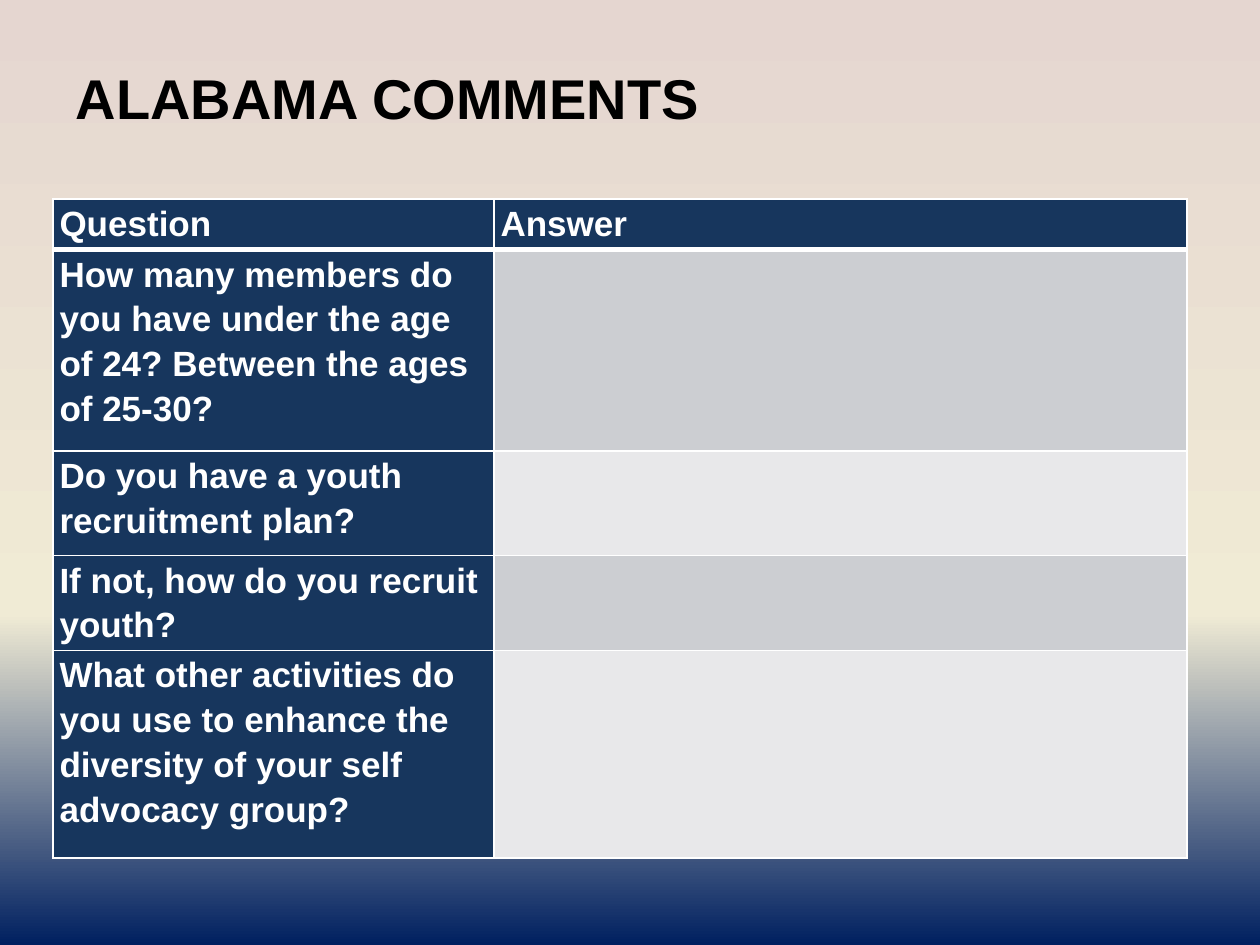
from lxml.etree import SubElement
from pptx import Presentation
from pptx.dml.color import RGBColor
from pptx.enum.text import MSO_ANCHOR, PP_ALIGN
from pptx.oxml.ns import qn
from pptx.util import Cm, Pt

TITLE = "ALABAMA COMMENTS"
ROWS = [
    ("Question", "Answer"),
    ("How many members do you have under the age of 24? Between the ages of 25-30?", ""),
    ("Do you have a youth recruitment plan?", ""),
    ("If not, how do you recruit youth?", ""),
    ("What other activities do you use to enhance the diversity of your self advocacy group?", ""),
]
COLUMN_WIDTHS = [8.89, 13.97]
ROW_HEIGHTS = [1.02, 4.06, 2.11, 1.91, 4.19]
BACKGROUND_STOPS = [(0, "E5D6D0"), (65, "F0EBD5"), (100, "002060")]
NAVY, WHITE, BLACK = "17365D", "FFFFFF", "000000"
ANSWER_BANDS = ["CCCED2", "E8E8EA"]


def color(hex_code):
    return RGBColor.from_string(hex_code)


def add_text(para, text, size, hex_code):
    span = para.add_run()
    span.text = text
    span.font.name = "Arial"
    span.font.size = Pt(size)
    span.font.bold = True
    span.font.color.rgb = color(hex_code)


def paint_background(page):
    fill = page.background.fill
    fill.gradient()
    fill.gradient_angle = 270
    stops = page.element.find(".//" + qn("a:gsLst"))
    for stop in list(stops):
        stops.remove(stop)
    for percent, hex_code in BACKGROUND_STOPS:
        stop = SubElement(stops, qn("a:gs"), pos=str(percent * 1000))
        SubElement(stop, qn("a:srgbClr"), val=hex_code)


def add_borders(cell, is_header, below_header):
    widths = {"L": 1, "R": 1, "T": 3 if below_header else 1, "B": 3 if is_header else 1}
    properties = cell._tc.get_or_add_tcPr()
    for side, width in widths.items():
        line = SubElement(properties, qn(f"a:ln{side}"), w=str(Pt(width)))
        SubElement(SubElement(line, qn("a:solidFill")), qn("a:srgbClr"), val=WHITE)


def add_title(page):
    title = page.shapes.title
    title.left, title.top, title.width, title.height = Cm(1.27), Cm(0.76), Cm(22.86), Cm(2.41)
    title.text_frame.vertical_anchor = MSO_ANCHOR.MIDDLE
    para = title.text_frame.paragraphs[0]
    para.alignment = PP_ALIGN.LEFT
    add_text(para, TITLE, 32, BLACK)


def add_question_table(page):
    table = page.shapes.add_table(
        len(ROWS), len(COLUMN_WIDTHS), Cm(1.07), Cm(4.01),
        Cm(sum(COLUMN_WIDTHS)), Cm(sum(ROW_HEIGHTS))).table
    for column, width in zip(table.columns, COLUMN_WIDTHS):
        column.width = Cm(width)
    for row, height in zip(table.rows, ROW_HEIGHTS):
        row.height = Cm(height)

    for row_number, texts in enumerate(ROWS):
        for column_number, text in enumerate(texts):
            cell = table.cell(row_number, column_number)
            add_borders(cell, row_number == 0, row_number == 1)
            cell.fill.solid()
            band = ANSWER_BANDS[(row_number - 1) % 2]
            cell.fill.fore_color.rgb = color(NAVY if text else band)
            if text:
                cell.margin_left = cell.margin_right = Cm(0.13)
                cell.margin_top = cell.margin_bottom = Cm(0)
                para = cell.text_frame.paragraphs[0]
                para.line_spacing = 1.15
                add_text(para, text, 20, WHITE)


def main():
    deck = Presentation()
    deck.slide_width, deck.slide_height = Cm(25.4), Cm(19.05)
    page = deck.slides.add_slide(deck.slide_layouts[5])
    paint_background(page)
    add_title(page)
    add_question_table(page)
    deck.save("out.pptx")


if __name__ == "__main__":
    main()
